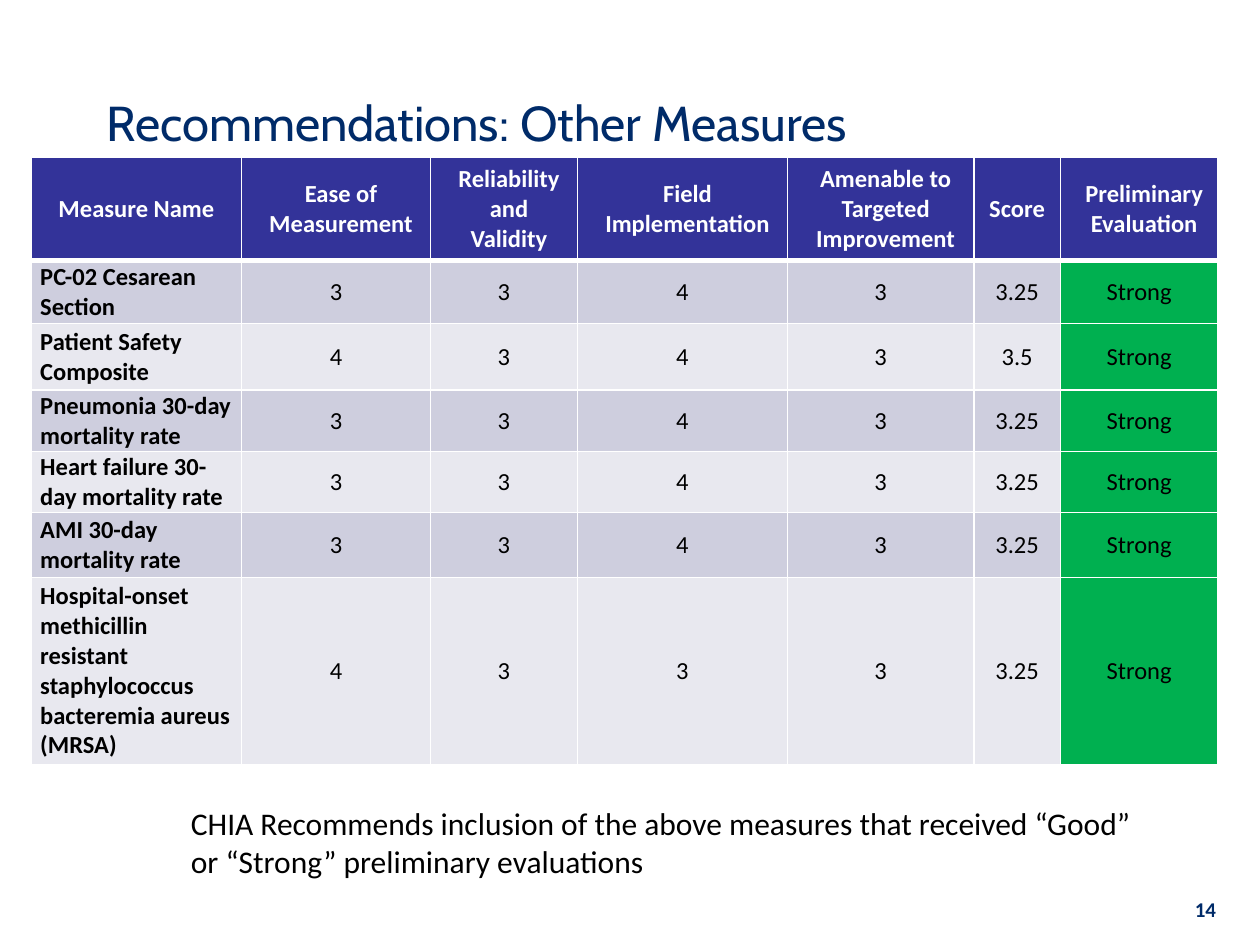
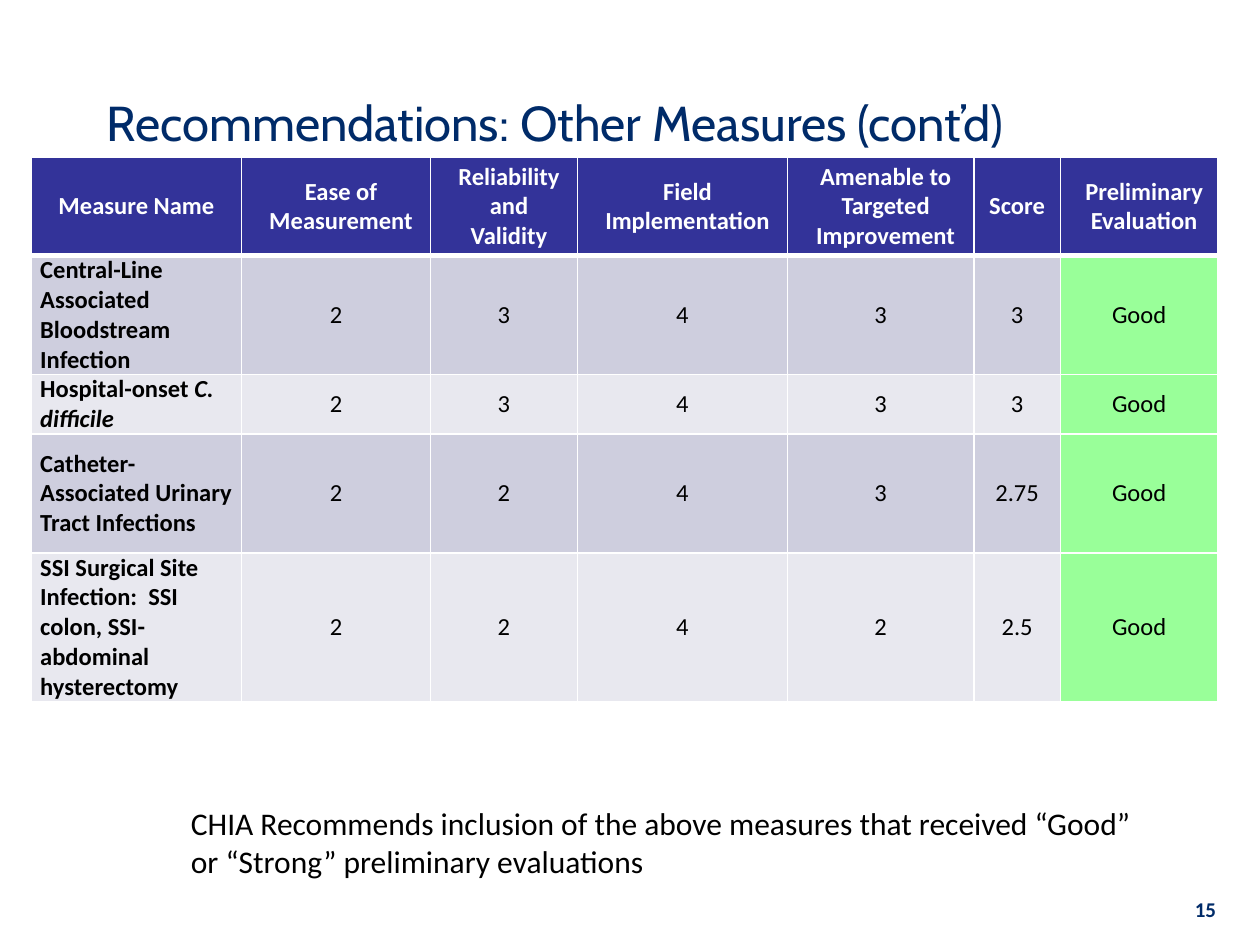
from dataclasses import dataclass

from lxml import etree
from pptx import Presentation
from pptx.dml.color import RGBColor
from pptx.enum.text import MSO_ANCHOR, PP_ALIGN
from pptx.oxml.ns import qn
from pptx.util import Pt

# Content: each measure is name, ratings, score, evaluation, row height
HEADERS = ["Measure Name", "Ease of Measurement", "Reliability and Validity",
           "Field Implementation", "Amenable to Targeted Improvement",
           "Score", "Preliminary Evaluation"]
NOTE = ("CHIA Recommends inclusion of the above measures that received "
        "“Good” or “Strong” preliminary evaluations")
SLIDES = [
    dict(title="Recommendations: Other Measures", number="14", header_height=59,
         measures=[
             ("PC-02 Cesarean Section", "3 3 4 3", "3.25", "Strong", 36),
             ("Patient Safety Composite", "4 3 4 3", "3.5", "Strong", 38),
             ("Pneumonia 30-day mortality rate", "3 3 4 3", "3.25", "Strong", 35),
             ("Heart failure 30-day mortality rate", "3 3 4 3", "3.25", "Strong", 35),
             ("AMI 30-day mortality rate", "3 3 4 3", "3.25", "Strong", 37),
             ("Hospital-onset methicillin resistant staphylococcus bacteremia "
              "aureus (MRSA)", "4 3 3 3", "3.25", "Strong", 107),
         ]),
    dict(title="Recommendations: Other Measures (cont’d)", number="15", header_height=56,
         measures=[
             ("Central-Line Associated Bloodstream Infection", "2 3 4 3", "3", "Good", 68),
             ("Hospital-onset |C. difficile", "2 3 4 3", "3", "Good", 34),
             ("Catheter-Associated Urinary Tract Infections", "2 2 4 3", "2.75", "Good", 68),
             ("SSI Surgical Site Infection:  SSI colon, SSI-abdominal hysterectomy",
              "2 2 4 2", "2.5", "Good", 85),
         ]),
]
ITALIC_MARK = "|"  # text after the mark is italic


@dataclass(frozen=True)
class Theme:
    title_font: str = "Cabin"
    body_font: str = "Calibri"
    navy: str = "002B69"
    header: str = "333399"
    white: str = "FFFFFF"
    black: str = "000000"
    bands: tuple = ("CECEDE", "E8E8EF")
    title_size: float = 28
    note_size: float = 18
    cell_size: float = 14
    number_size: float = 12


T = Theme()
EVALUATION_FILL = {"Strong": "00B050", "Good": "99FF99"}

# Layout in points
TITLE_BOX = (54, 48.2, 612, 78)
NOTE_BOX = (102, 456, 564, 51)
NUMBER_BOX = (552, 510, 150, 19.5)
TABLE_LEFT, TABLE_TOP = 18, 90
COLUMN_WIDTHS = [120, 108, 84, 120, 106.5, 49.5, 90]
CELL_MARGIN = 5
HEADER_INDENT = 5.75
UNINDENTED = ("Measure Name", "Score")
THIN, THICK = 1, 3


def style(p, size, color, font=T.body_font, bold=False, align=PP_ALIGN.LEFT):
    p.alignment = align
    p.font.name, p.font.size, p.font.bold = font, Pt(size), bold
    p.font.color.rgb = RGBColor.from_string(color)


def add_text(s, box, text, anchor=MSO_ANCHOR.TOP, top_inset=3.6, **look):
    tf = s.shapes.add_textbox(*map(Pt, box)).text_frame
    tf.word_wrap = True
    tf.vertical_anchor = anchor
    tf.margin_top = Pt(top_inset)
    tf.paragraphs[0].text = text
    style(tf.paragraphs[0], **look)


def set_borders(cell, top, bottom):
    tcPr = cell._tc.get_or_add_tcPr()
    for side, width in (("L", THIN), ("R", THIN), ("T", top), ("B", bottom)):
        ln = etree.SubElement(tcPr, qn(f"a:ln{side}"), w=str(Pt(width)))
        fill = etree.SubElement(ln, qn("a:solidFill"))
        etree.SubElement(fill, qn("a:srgbClr"), val=T.white)


def fill_cell(cell, text, fill, color=T.black, bold=False, align=PP_ALIGN.CENTER,
              indent=0, top=THIN, bottom=THIN):
    set_borders(cell, top, bottom)
    cell.fill.solid()
    cell.fill.fore_color.rgb = RGBColor.from_string(fill)
    cell.vertical_anchor = MSO_ANCHOR.MIDDLE
    cell.margin_left = cell.margin_right = Pt(CELL_MARGIN)
    cell.margin_top = cell.margin_bottom = 0
    p = cell.text_frame.paragraphs[0]
    for i, part in enumerate(text.split(ITALIC_MARK)):
        r = p.add_run()
        r.text = part
        if i:
            r.font.italic = True
    style(p, T.cell_size, color, bold=bold, align=align)
    if indent:
        pPr = p._p.get_or_add_pPr()
        pPr.set("marL", str(Pt(indent)))
        pPr.set("indent", "0")


def add_measures_table(s, header_height, measures):
    heights = [header_height] + [m[-1] for m in measures]
    box = (TABLE_LEFT, TABLE_TOP, sum(COLUMN_WIDTHS), sum(heights))
    table = s.shapes.add_table(len(heights), len(HEADERS), *map(Pt, box)).table
    for column, width in zip(table.columns, COLUMN_WIDTHS):
        column.width = Pt(width)
    for row, height in zip(table.rows, heights):
        row.height = Pt(height)

    for c, text in enumerate(HEADERS):
        fill_cell(table.cell(0, c), text, T.header, T.white, bold=True, bottom=THICK,
                  indent=0 if text in UNINDENTED else HEADER_INDENT)

    for r, (name, ratings, score, evaluation, _) in enumerate(measures, 1):
        band = T.bands[(r - 1) % 2]
        top = THICK if r == 1 else THIN
        fill_cell(table.cell(r, 0), name, band, bold=True, align=PP_ALIGN.LEFT, top=top)
        for c, value in enumerate([*ratings.split(), score], 1):
            fill_cell(table.cell(r, c), value, band, top=top)
        fill_cell(table.cell(r, len(HEADERS) - 1), evaluation,
                  EVALUATION_FILL[evaluation], top=top)


def add_slide(prs, title, number, header_height, measures):
    s = prs.slides.add_slide(prs.slide_layouts[6])
    add_text(s, NUMBER_BOX, number, MSO_ANCHOR.MIDDLE, size=T.number_size,
             color=T.navy, bold=True, align=PP_ALIGN.RIGHT)
    add_text(s, TITLE_BOX, title, top_inset=4.8, size=T.title_size,
             color=T.navy, font=T.title_font)
    add_measures_table(s, header_height, measures)
    add_text(s, NOTE_BOX, NOTE, size=T.note_size, color=T.black)


def main():
    prs = Presentation()
    prs.slide_width, prs.slide_height = Pt(720), Pt(540)
    for content in SLIDES:
        add_slide(prs, **content)
    prs.save("out.pptx")


if __name__ == "__main__":
    main()
